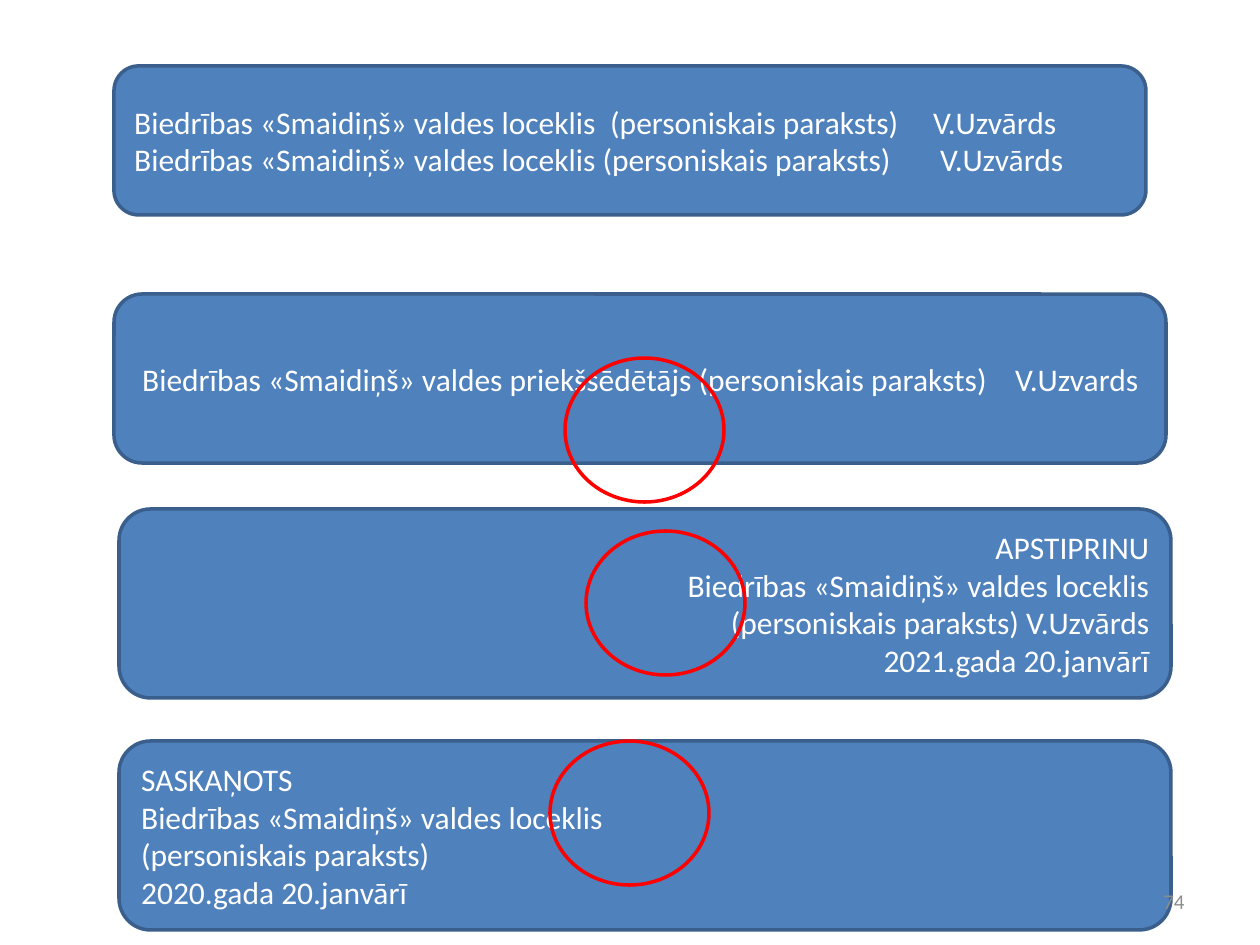
from dataclasses import dataclass

from lxml import etree
from pptx import Presentation
from pptx.dml.color import RGBColor
from pptx.enum.shapes import MSO_SHAPE
from pptx.enum.text import MSO_ANCHOR, PP_ALIGN
from pptx.oxml.ns import qn
from pptx.util import Emu, Pt

ROUNDED, ELLIPSE = MSO_SHAPE.ROUNDED_RECTANGLE, MSO_SHAPE.OVAL
LEFT, RIGHT = PP_ALIGN.LEFT, PP_ALIGN.RIGHT
MIDDLE = MSO_ANCHOR.MIDDLE
PX_PER_INCH = 126
INSET = 13


@dataclass(frozen=True)
class Theme:
    font: str = "Calibri"
    panel: str = "4F81BD"
    panel_edge: str = "3A5F8C"
    stamp: str = "FF0000"
    text: str = "FFFFFF"
    number: str = "8C8C8C"
    body_size: int = 18
    number_size: int = 12
    line_width: int = 2


@dataclass(frozen=True)
class Line:
    text: str
    tabs: tuple[int, ...] = ()


@dataclass(frozen=True)
class Panel:
    left: int
    top: int
    width: int
    height: int
    lines: tuple[Line, ...]
    align: PP_ALIGN = LEFT
    inset: int = INSET


@dataclass(frozen=True)
class Stamp:
    left: int
    top: int
    width: int = 159
    height: int = 144


THEME = Theme()
MEMBER = "Biedrības «Smaidiņš» valdes loceklis"
SIGNED = "(personiskais paraksts)"

# Signature panels and stamp rings, from back to front
PARTS = (
    Panel(114, 66, 1032, 149, (
        Line(f"{MEMBER}\t{SIGNED}\tV.Uzvārds", (476, 799)),
        Line(f"{MEMBER} {SIGNED}\tV.Uzvārds", (806,)),
    )),
    Panel(114, 294, 1052, 169, (
        Line(f"Biedrības «Smaidiņš» valdes priekšsēdētājs {SIGNED}\tV.Uzvards", (873,)),
    ), inset=20),
    Stamp(565, 358),
    Panel(119, 509, 1052, 189, (
        Line("APSTIPRINU"),
        Line(MEMBER),
        Line(f"{SIGNED} V.Uzvārds"),
        Line("2021.gada 20.janvārī"),
    ), RIGHT),
    Panel(119, 741, 1052, 189, (
        Line("SASKAŅOTS"),
        Line(MEMBER),
        Line(SIGNED),
        Line("2020.gada 20.janvārī"),
    )),
    Stamp(586, 531),
    Stamp(550, 741),
)


def px(length: int) -> Emu:
    return Emu(round(length * 914400 / PX_PER_INCH))


def add_tabs(para, stops: tuple[int, ...]) -> None:
    tab_list = etree.SubElement(para._p.get_or_add_pPr(), qn("a:tabLst"))
    for stop in stops:
        etree.SubElement(tab_list, qn("a:tab"), pos=str(px(stop)), algn="l")


def write_lines(box, lines: tuple[Line, ...], align: PP_ALIGN, size: int, color: str) -> None:
    frame = box.text_frame
    frame.word_wrap = True
    frame.vertical_anchor = MIDDLE
    for index, line in enumerate(lines):
        para = frame.add_paragraph() if index else frame.paragraphs[0]
        para.alignment = align
        if line.tabs:
            add_tabs(para, line.tabs)
        span = para.add_run()
        span.text = line.text
        span.font.name = THEME.font
        span.font.size = Pt(size)
        span.font.color.rgb = RGBColor.from_string(color)


def add_outlined(page, kind: MSO_SHAPE, part: Panel | Stamp, edge: str):
    box = page.shapes.add_shape(
        kind, px(part.left), px(part.top), px(part.width), px(part.height))
    box.shadow.inherit = False
    box.line.color.rgb = RGBColor.from_string(edge)
    box.line.width = Pt(THEME.line_width)
    return box


def draw_panel(page, panel: Panel) -> None:
    box = add_outlined(page, ROUNDED, panel, THEME.panel_edge)
    box.fill.solid()
    box.fill.fore_color.rgb = RGBColor.from_string(THEME.panel)
    box.text_frame.margin_left = px(panel.inset)
    write_lines(box, panel.lines, panel.align, THEME.body_size, THEME.text)


def draw_stamp(page, stamp: Stamp) -> None:
    add_outlined(page, ELLIPSE, stamp, THEME.stamp).fill.background()


def main() -> None:
    deck = Presentation()
    deck.slide_width, deck.slide_height = px(1260), px(945)
    page = deck.slides.add_slide(deck.slide_layouts[6])

    for part in PARTS:
        if isinstance(part, Panel):
            draw_panel(page, part)
        else:
            draw_stamp(page, part)

    # Page number
    box = page.shapes.add_textbox(px(903), px(876), px(294), px(50))
    write_lines(box, (Line("74"),), RIGHT, THEME.number_size, THEME.number)

    deck.save("out.pptx")


if __name__ == "__main__":
    main()
